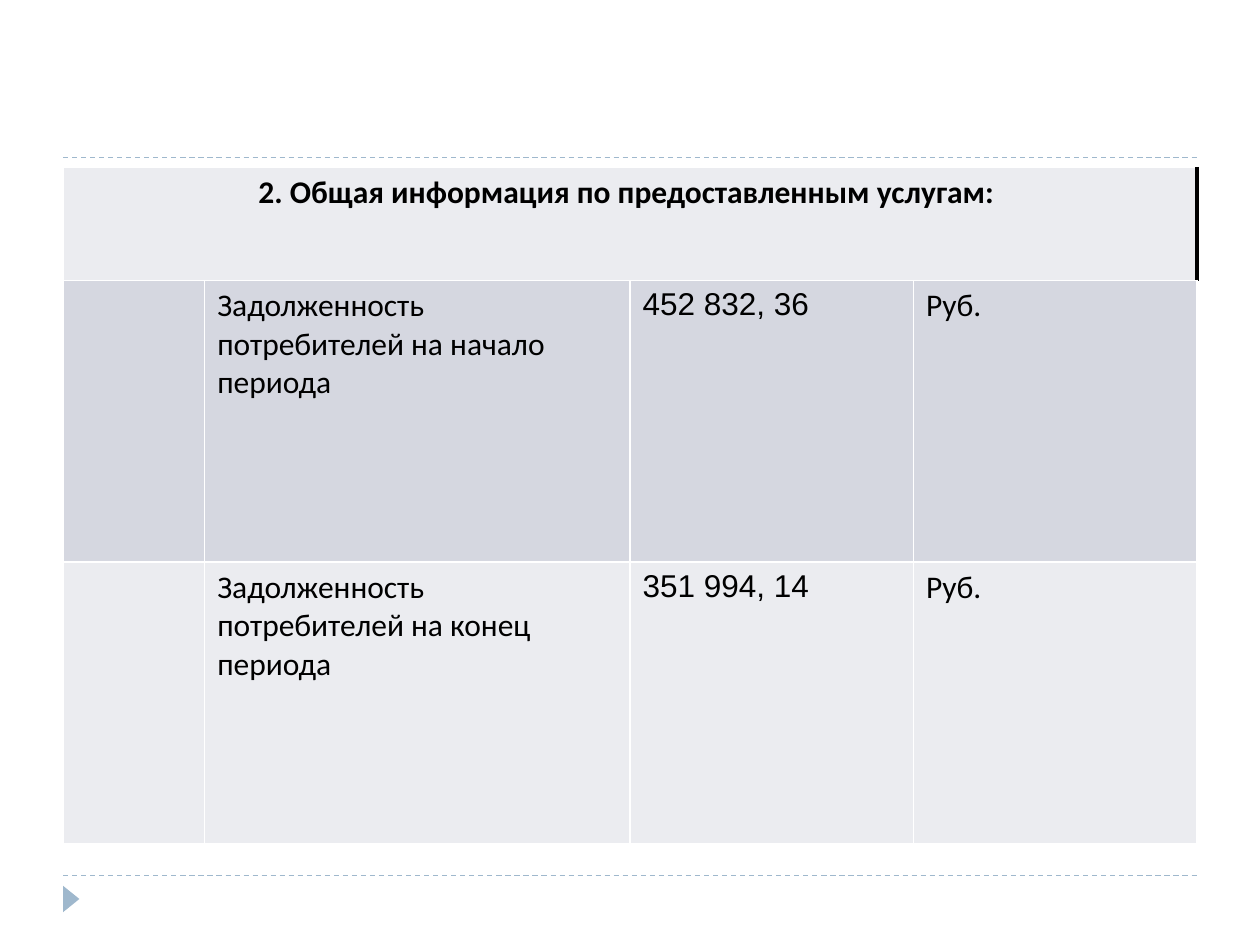
from pptx import Presentation
from pptx import util as u
from pptx.dml.color import RGBColor
from pptx.enum import dml, shapes, text
from pptx.oxml import parse_xml
from pptx.oxml.ns import nsdecls, qn
from lxml import etree

HUES = {"rule": "9FB8CD", "pale": "EBECF0", "dark": "D5D7E0",
        "ink": "000000", "grid": "FFFFFF"}
HEAD = "2. Общая информация по предоставленным услугам: "
ROWS = [
    ("", "Задолженность потребителей на начало периода", "452 832, 36", "Руб."),
    ("", "Задолженность потребителей на конец периода", "351 994, 14", "Руб."),
]
FONTS = ("Calibri", "Calibri", "Arial", "Calibri")


def hue(name):
    """Return the named colour."""
    return RGBColor.from_string(HUES[name])


def rule(slide, left, right, top):
    """Draw a dashed rule across the slide."""
    line = slide.shapes.add_connector(
        shapes.MSO_CONNECTOR.STRAIGHT,
        u.Inches(left), u.Inches(top), u.Inches(right), u.Inches(top))
    line.line.color.rgb = hue("rule")
    line.line.width = u.Pt(0.75)
    line.line.dash_style = dml.MSO_LINE.DASH
    etree.SubElement(line._element.spPr, qn("a:effectLst"))


def mark(slide, left, top, width, height):
    """Draw the footer triangle, pointing right."""
    tri = slide.shapes.add_shape(
        shapes.MSO_SHAPE.ISOSCELES_TRIANGLE,
        *map(u.Inches, (left, top, width, height)))
    tri.rotation = 90
    tri.shadow.inherit = False
    tri.fill.solid()
    tri.fill.fore_color.rgb = hue("rule")
    tri.line.fill.background()


def edge(cell, side, name, width):
    """Set one border of a cell."""
    return parse_xml(
        f'<a:ln{side} {nsdecls("a")} w="{u.Pt(width)}"><a:solidFill>'
        f'<a:srgbClr val="{HUES[name]}"/></a:solidFill></a:ln{side}>')


def dress(cell, fill, right=("grid", 1)):
    """Fill a cell and give it borders."""
    cell.fill.solid()
    cell.fill.fore_color.rgb = hue(fill)
    props = cell._tc.get_or_add_tcPr()
    for spot, side in enumerate("LRTB"):
        look = right if side == "R" else ("grid", 1)
        props.insert(spot, edge(cell, side, *look))


def write(cell, words, font, bold=False):
    """Add one run of text to a cell."""
    run = cell.text_frame.paragraphs[0].add_run()
    run.text = words
    run.font.name = font
    run.font.size = u.Pt(18)
    run.font.bold = bold
    run.font.color.rgb = hue("ink")


def debts(slide, left, top, width, height):
    """Build the debt table inside the given box."""
    grid = slide.shapes.add_table(
        3, 4, *map(u.Inches, (left, top, width, height))).table
    for col, share in zip(grid.columns, (1, 3, 2, 2)):
        col.width = u.Inches(width * share / 8)
    for row, share in zip(grid.rows, (2, 5, 5)):
        row.height = u.Inches(height * share / 12)
    head = grid.cell(0, 0)
    head.merge(grid.cell(0, 3))
    for col in range(4):
        dress(grid.cell(0, col), "pale", ("ink", 2.25) if col in (0, 3) else ("grid", 1))
    write(head, HEAD, "Calibri", True)
    head.text_frame.paragraphs[0].alignment = text.PP_ALIGN.CENTER
    for row, (items, fill) in enumerate(zip(ROWS, ("dark", "pale")), 1):
        for col, (words, font) in enumerate(zip(items, FONTS)):
            cell = grid.cell(row, col)
            dress(cell, fill)
            if words:
                write(cell, words, font)


def main():
    """Build and save the slide."""
    deck = Presentation()
    deck.slide_width, deck.slide_height = u.Inches(10), u.Inches(7.5)
    slide = deck.slides.add_slide(deck.slide_layouts[6])
    for top in (6.95, 1.25):
        rule(slide, 0.5, 9.5, top)
    mark(slide, 0.46, 7.07, 0.21, 0.13)
    debts(slide, 0.5, 1.33, 9, 5.37)
    deck.save("out.pptx")


if __name__ == "__main__":
    main()
